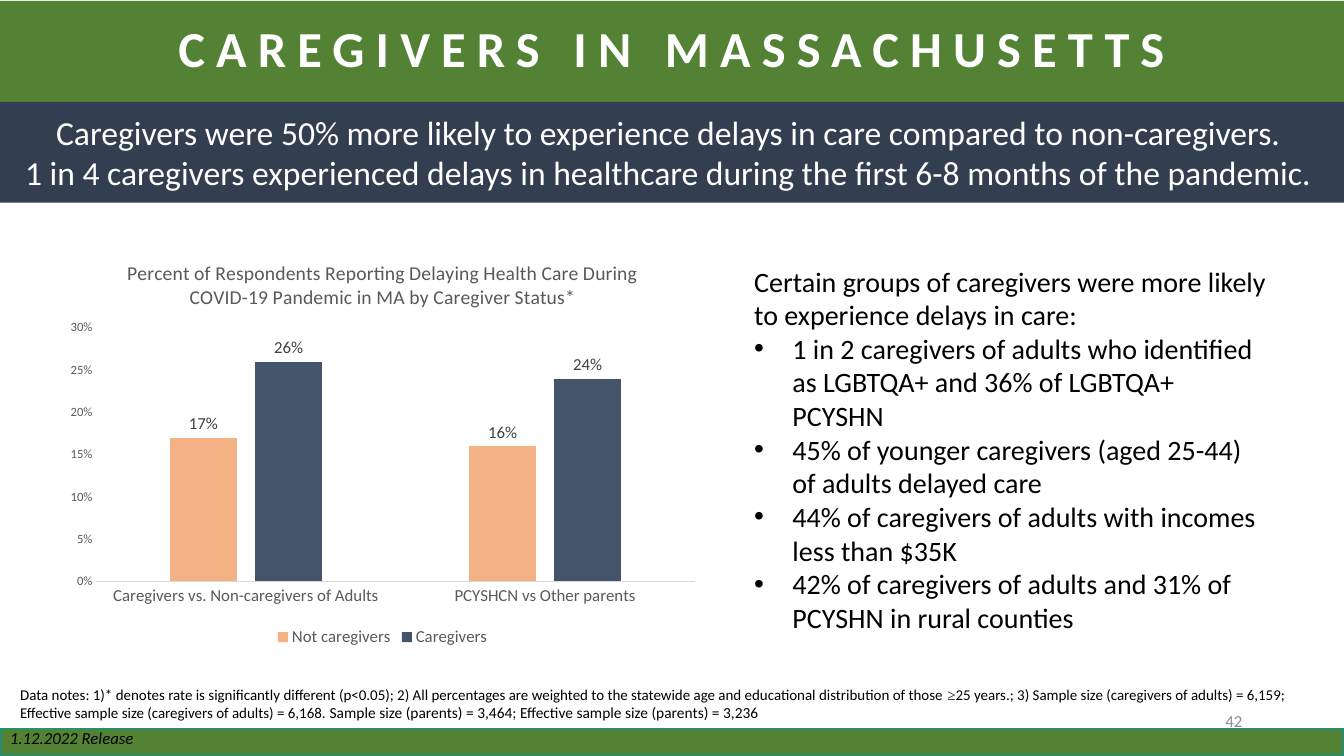
from lxml.etree import SubElement
from pptx import Presentation
from pptx.chart.data import CategoryChartData
from pptx.dml.color import RGBColor
from pptx.enum.chart import XL_CHART_TYPE as ChartType, XL_LABEL_POSITION as LabelPosition
from pptx.enum.chart import XL_LEGEND_POSITION as LegendPosition, XL_TICK_MARK as TickMark
from pptx.enum.shapes import MSO_SHAPE as Preset
from pptx.enum.text import MSO_ANCHOR as Anchor, MSO_AUTO_SIZE as AutoSize, PP_ALIGN as Align
from pptx.oxml.ns import qn
from pptx.util import Inches, Pt

GREEN = RGBColor(0x54, 0x82, 0x35)
TEAL = RGBColor(0x00, 0x97, 0xA7)
NAVY = RGBColor(0x33, 0x3F, 0x50)
SLATE = RGBColor(0x44, 0x54, 0x6A)
PEACH = RGBColor(0xF4, 0xB1, 0x83)
WHITE = RGBColor(0xFF, 0xFF, 0xFF)
BLACK = RGBColor(0x00, 0x00, 0x00)
INK = RGBColor(0x40, 0x40, 0x40)
GREY = RGBColor(0x59, 0x59, 0x59)
PALE = RGBColor(0xD9, 0xD9, 0xD9)
PAGE_GREY = RGBColor(0x8C, 0x8C, 0x8C)

TITLE = "CAREGIVERS IN MASSACHUSETTS"
MESSAGES = [
    "Caregivers were 50% more likely to experience delays in care compared to non-caregivers. ",
    "1 in 4 caregivers experienced delays in healthcare during the first 6-8 months of the pandemic. ",
]
GROUPS_LEAD = "Certain groups of caregivers were more likely to experience delays in care:"
GROUPS = [
    "1 in 2 caregivers of adults who identified as LGBTQA+ and 36% of LGBTQA+ PCYSHN",
    "45% of younger caregivers (aged 25-44) of adults delayed care",
    "44% of caregivers of adults with incomes less than $35K",
    "42% of caregivers of adults and 31% of PCYSHN in rural counties",
]
NOTES = [
    ("Data notes: 1)* denotes rate is significantly different (p<0.05); 2) All percentages are "
     "weighted to the statewide age and educational distribution of those ", 10.7, "Calibri"),
    ("≥", 10.7, "Times New Roman"),
    ("25 years.; 3) Sample size (caregivers of adults) = 6,159; Effective sample size "
     "(caregivers of adults) = 6,168. ", 10.7, "Calibri"),
    ("Sample size (parents) = 3,464; Effective sample size (parents) = 3,236", 11, "Calibri"),
]
CHART_TITLE = ("Percent of Respondents Reporting Delaying Health Care During "
               "COVID-19 Pandemic in MA by Caregiver Status*")
CATEGORIES = ["Caregivers vs. Non-caregivers of Adults", "PCYSHCN vs Other parents"]
SERIES = [("Not caregivers", (0.17, 0.16), PEACH), ("Caregivers", (0.26, 0.24), SLATE)]
PLOT_BOX = {"x": 0.06, "y": 0.21, "w": 0.92, "h": 0.62}


def inches(box):
    """Turn a left, top, width, height box into lengths."""
    return [Inches(value) for value in box]


def place(shape, box):
    """Move a placeholder into the box."""
    shape.left, shape.top, shape.width, shape.height = inches(box)


def style(font, size, color, name="Calibri", bold=False, italic=False):
    """Set the look of a font."""
    font.size, font.name, font.bold, font.italic = Pt(size), name, bold, italic
    font.color.rgb = color


def add_band(page, box, fill, line=None):
    """Draw a full-width coloured band."""
    band = page.shapes.add_shape(Preset.RECTANGLE, *inches(box))
    band.shadow.inherit = False
    band.fill.solid()
    band.fill.fore_color.rgb = fill
    if line is None:
        band.line.fill.background()
    else:
        band.line.color.rgb = line
        band.line.width = Pt(1)
    return band


def add_label(page, box, text, size, color, align=Align.LEFT, italic=False):
    """Add a vertically centred one-line text."""
    frame = page.shapes.add_textbox(*inches(box)).text_frame
    frame.word_wrap = True
    frame.vertical_anchor = Anchor.MIDDLE
    frame.text = text
    para = frame.paragraphs[0]
    para.alignment = align
    style(para.runs[0].font, size, color, italic=italic)


def fill_title(page, box):
    """Format the title placeholder as the green heading."""
    title = page.shapes.title
    place(title, box)
    title.fill.solid()
    title.fill.fore_color.rgb = GREEN
    frame = title.text_frame
    frame.text = TITLE
    frame.auto_size = AutoSize.NONE
    frame.vertical_anchor = Anchor.MIDDLE
    para = frame.paragraphs[0]
    para.alignment, para.line_spacing = Align.CENTER, 0.9
    span = para.runs[0]
    style(span.font, 36, WHITE, bold=True)
    span.font._element.set("spc", "800")


def add_messages(page, box):
    """Add the navy band with the key messages."""
    frame = add_band(page, box, NAVY).text_frame
    frame.word_wrap = True
    frame.vertical_anchor = Anchor.MIDDLE
    frame.text = "\n".join(MESSAGES)
    for para in frame.paragraphs:
        para.alignment = Align.CENTER
        style(para.runs[0].font, 24, WHITE)


def fill_groups(page, box):
    """Fill the body placeholder with the lead line and its bullets."""
    body = page.placeholders[1]
    place(body, box)
    frame = body.text_frame
    frame.text = "\n".join([GROUPS_LEAD] + GROUPS)
    frame.auto_size = AutoSize.NONE
    for index, para in enumerate(frame.paragraphs):
        para.space_before = Pt(0)
        style(para.runs[0].font, 20, BLACK)
        indent = Inches(0.38) if index else 0
        props = para._p.get_or_add_pPr()
        props.set("marL", str(indent))
        props.set("indent", str(-indent))
        if index:
            SubElement(props, qn("a:buFont")).set("typeface", "Arial")
            SubElement(props, qn("a:buChar")).set("char", "•")
        else:
            SubElement(props, qn("a:buNone"))


def add_notes(page, box):
    """Add the data notes above the footer."""
    frame = page.shapes.add_textbox(*inches(box)).text_frame
    frame.word_wrap = True
    frame.margin_left = frame.margin_right = Inches(0.13)
    frame.margin_top = frame.margin_bottom = Inches(0.07)
    for text, size, name in NOTES:
        span = frame.paragraphs[0].add_run()
        span.text = text
        style(span.font, size, BLACK, name)


def fix_plot_box(chart):
    """Pin the inner plot area to fractions of the chart."""
    plot_area = chart._chartSpace.chart.plotArea
    for old in plot_area.findall(qn("c:layout")):
        plot_area.remove(old)
    layout = SubElement(plot_area, qn("c:layout"))
    plot_area.insert(0, layout)
    manual = SubElement(layout, qn("c:manualLayout"))
    settings = [("layoutTarget", "inner"), ("xMode", "edge"), ("yMode", "edge")]
    for key, value in settings + list(PLOT_BOX.items()):
        SubElement(manual, qn(f"c:{key}")).set("val", str(value))


def add_delay_chart(page, box):
    """Add the clustered columns of delayed care."""
    data = CategoryChartData(number_format="0%")
    data.categories = CATEGORIES
    for name, values, _ in SERIES:
        data.add_series(name, values)
    chart = page.shapes.add_chart(ChartType.COLUMN_CLUSTERED, *inches(box), data).chart
    style(chart.font, 10, BLACK)
    chart.has_title = True
    chart.chart_title.text_frame.text = CHART_TITLE
    style(chart.chart_title.text_frame.paragraphs[0].runs[0].font, 14, GREY)
    chart.has_legend = True
    chart.legend.position = LegendPosition.BOTTOM
    chart.legend.include_in_layout = False
    style(chart.legend.font, 12, GREY)
    for axis, size in ((chart.category_axis, 12), (chart.value_axis, 9)):
        axis.major_tick_mark = axis.minor_tick_mark = TickMark.NONE
        axis.has_major_gridlines = False
        style(axis.tick_labels.font, size, GREY)
    chart.category_axis.format.line.color.rgb = PALE
    chart.category_axis.format.line.width = Pt(0.75)
    values_axis = chart.value_axis
    values_axis.format.line.fill.background()
    values_axis.minimum_scale, values_axis.maximum_scale, values_axis.major_unit = 0, 0.3, 0.05
    values_axis.tick_labels.number_format = "0%"
    values_axis.tick_labels.number_format_is_linked = False
    plot = chart.plots[0]
    plot.gap_width, plot.overlap, plot.vary_by_categories = 219, -27, False
    for series, (_, _, color) in zip(plot.series, SERIES):
        series.format.fill.solid()
        series.format.fill.fore_color.rgb = color
        labels = series.data_labels
        labels.show_value = True
        labels.position = LabelPosition.OUTSIDE_END
        labels.number_format, labels.number_format_is_linked = "0%", False
        style(labels.font, 12, INK)
    fix_plot_box(chart)


def add_footer(page, box):
    """Add the green footer band with release date and page number."""
    left, top, width, _ = box
    add_band(page, box, GREEN, TEAL)
    add_label(page, (left, top - 0.05, 3, 0.28), "1.12.2022 Release", 12, BLACK, italic=True)
    add_label(page, (left + width - 3.91, top - 0.28, 3, 0.4), "42", 12, PAGE_GREY, Align.RIGHT)


def main():
    """Build and save the slide."""
    deck = Presentation()
    deck.slide_width, deck.slide_height = Inches(13.33), Inches(7.5)
    page = deck.slides.add_slide(deck.slide_layouts[1])
    fill_title(page, (0, 0.01, 13.33, 1))
    add_messages(page, (0, 1.01, 13.33, 1))
    fill_groups(page, (7.38, 2.57, 5.31, 3.8))
    add_delay_chart(page, (0.57, 2.4, 6.45, 4.06))
    add_notes(page, (0.07, 6.73, 13.09, 0.5))
    add_footer(page, (0, 7.23, 13.33, 0.27))
    deck.save("out.pptx")


if __name__ == "__main__":
    main()
